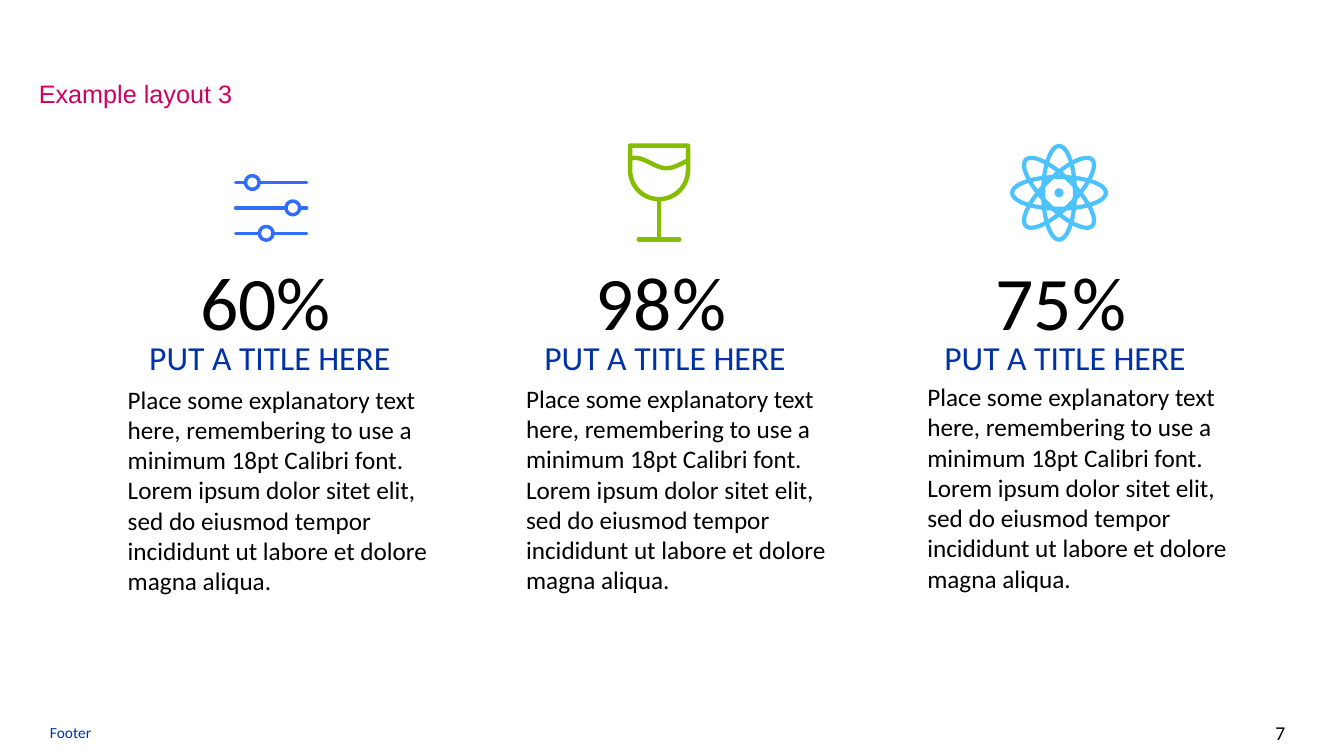
from math import cos, pi, radians, sin

from lxml.etree import SubElement
from pptx import Presentation
from pptx.dml.color import RGBColor
from pptx.enum.text import MSO_ANCHOR, MSO_AUTO_SIZE, PP_ALIGN
from pptx.oxml.ns import qn
from pptx.util import Cm, Pt

COLORS = {
    "black": "000000",
    "navy": "0031A7",
    "pink": "CE0060",
    "blue": "316EFF",
    "green": "85BE00",
    "sky": "4CC2FF",
}
EXPLANATION = (
    "Place some explanatory text here, remembering to use a minimum 18pt Calibri font. "
    "Lorem ipsum dolor sitet elit, sed do eiusmod tempor incididunt ut labore et dolore "
    "magna aliqua."
)


def ellipse(x, y, a, b, angle=0, steps=72):
    """Closed ring of points with half-axes a and b, turned by angle degrees."""
    turn = radians(angle)
    ring = []
    for i in range(steps + 1):
        u, v = a * cos(2 * pi * i / steps), b * sin(2 * pi * i / steps)
        ring.append((x + u * cos(turn) - v * sin(turn), y + u * sin(turn) + v * cos(turn)))
    return ring


class SlideBuilder:
    """Style and drawing methods for one slide; all lengths are centimetres."""

    def __init__(self, slide, font="Calibri"):
        self.slide = slide
        self.font = font

    def color(self, name):
        return RGBColor.from_string(COLORS[name])

    def text(self, words, left, top, width, height, size, color="black", font=None,
             align=PP_ALIGN.LEFT, anchor=MSO_ANCHOR.TOP, grow=True):
        box = self.slide.shapes.add_textbox(Cm(left), Cm(top), Cm(width), Cm(height))
        frame = box.text_frame
        frame.word_wrap = True
        frame.auto_size = MSO_AUTO_SIZE.SHAPE_TO_FIT_TEXT if grow else MSO_AUTO_SIZE.NONE
        frame.vertical_anchor = anchor
        frame.text = words
        paragraph = frame.paragraphs[0]
        paragraph.alignment = align
        paragraph.font.size = Pt(size)
        paragraph.font.name = font or self.font
        paragraph.font.color.rgb = self.color(color)

    def line_art(self, strokes, color, weight):
        """One outline shape made of several strokes; a stroke ending at its start is closed."""
        start = strokes[0][0]
        builder = self.slide.shapes.build_freeform(Cm(start[0]), Cm(start[1]))
        for index, stroke in enumerate(strokes):
            points = [(Cm(x), Cm(y)) for x, y in stroke]
            if index:
                builder.move_to(*points[0])
            builder.add_line_segments(points[1:], close=points[0] == points[-1])
        art = builder.convert_to_shape()
        art.fill.background()
        art.line.color.rgb = self.color(color)
        art.line.width = Pt(weight)
        art.shadow.inherit = False
        outline = art._element.spPr.find(qn("a:ln"))
        outline.set("cap", "rnd")
        SubElement(outline, qn("a:round"))

    def sliders_icon(self, color):
        left, right, radius = 5.94, 7.73, 0.17
        strokes = []
        for row, knob_x in enumerate((6.36, 7.38, 6.71)):
            y = 4.6 + row * 0.64
            strokes += [
                [(left, y), (knob_x - radius, y)],
                ellipse(knob_x, y, radius, radius),
                [(knob_x + radius, y), (right, y)],
            ]
        self.line_art(strokes, color, 2.5)

    def glass_icon(self, color):
        center, radius, rim, bowl_y, foot_y = 16.61, 0.73, 3.67, 4.29, 6.03
        arc = [(center + radius * cos(pi * i / 32), bowl_y + radius * sin(pi * i / 32))
               for i in range(33)]
        corner = (center - radius, rim)
        bowl = [corner, (center + radius, rim)] + arc + [corner]
        # Wine surface: a wave with its crest near the left wall
        xs = [center - radius + 2 * radius * i / 24 for i in range(25)]
        wave = [(x, 4.11 - 0.13 * cos(2 * pi * (x - 16) / 1.6)) for x in xs]
        stem = [(center, bowl_y + radius), (center, foot_y)]
        foot = [(center - 0.51, foot_y), (center + 0.51, foot_y)]
        self.line_art([bowl, wave, stem, foot], color, 3.2)

    def atom_icon(self, color):
        x, y = 26.69, 4.86
        orbits = [ellipse(x, y, 1.18, 0.4, angle) for angle in (0, 45, 90, 135)]
        nucleus = ellipse(x, y, 0.06, 0.06)
        self.line_art(orbits + [nucleus], color, 3)


def main():
    deck = Presentation()
    deck.slide_width, deck.slide_height = Cm(33.87), Cm(19.05)
    page = SlideBuilder(deck.slides.add_slide(deck.slide_layouts[6]))

    # Heading and footer
    page.text("Example layout 3", 0.73, 1.85, 8.13, 1.04, 18, "pink", font="Arial")
    page.text("Footer", 1.01, 17.86, 27.38, 1.19, 11, "navy",
              anchor=MSO_ANCHOR.MIDDLE, grow=False)
    page.text("7", 28.83, 17.96, 3.81, 1.02, 14, align=PP_ALIGN.RIGHT,
              anchor=MSO_ANCHOR.MIDDLE, grow=False)

    # Three columns: icon, figure, title, explanation
    columns = [
        (page.sliders_icon, "blue", "60%", 3.51, 2.97, 9.55, 8.1),
        (page.glass_icon, "green", "98%", 13.47, 13.01, 9.53, 8.64),
        (page.atom_icon, "sky", "75%", 23.55, 23.12, 9.49, 8.53),
    ]
    for icon, color, figure, title_x, body_x, body_y, body_width in columns:
        icon(color)
        page.text(figure, title_x + 1.29, 6.3, 4.67, 2.57, 54)
        page.text("PUT A TITLE HERE", title_x, 8.36, 6.91, 1.27, 24, "navy")
        page.text(EXPLANATION, body_x, body_y, body_width, 6.5, 18)

    deck.save("out.pptx")


if __name__ == "__main__":
    main()
